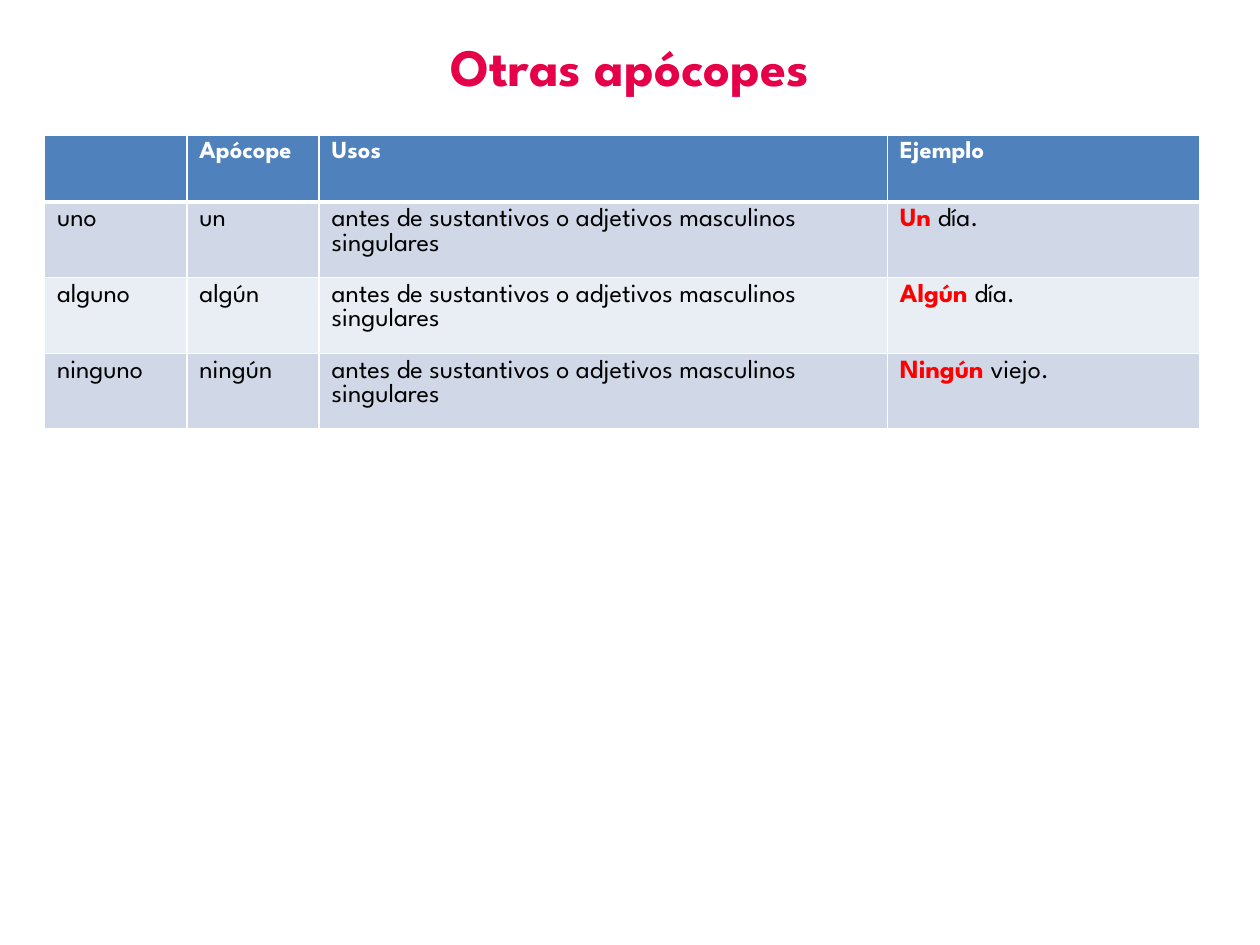
from pptx import Presentation
from pptx.dml.color import RGBColor
from pptx.enum.text import MSO_ANCHOR, MSO_AUTO_SIZE, PP_ALIGN
from pptx.oxml import parse_xml
from pptx.oxml.ns import nsdecls
from pptx.util import Pt

HUES = {"title": "E60049", "head": "4F81BD", "odd": "D0D8E8",
        "even": "E9EDF4", "white": "FFFFFF", "black": "000000", "red": "FF0000"}
FACE = "League Spartan"
STYLES = {
    "title": {"name": FACE, "size": Pt(30), "bold": True},
    "head": {"name": FACE, "size": Pt(14), "bold": True},
    "body": {"name": FACE, "size": Pt(15), "bold": False},
    "key": {"name": FACE, "size": Pt(15), "bold": True},
}
WIDTHS = [81.4, 75.6, 324.7, 178.6]
HEIGHTS = [38.2, 43.2, 43.2, 43.2]
HEADS = ["", "Apócope", "Usos", "Ejemplo"]
USE = "antes de sustantivos o adjetivos masculinos singulares"
WORDS = [("uno", "un", "Un ", "día."),
         ("alguno", "algún", "Algún ", "día."),
         ("ninguno", "ningún", "Ningún ", "viejo.")]


def tint(name):
    return RGBColor.from_string(HUES[name])


def write(para, text, style, hue):
    run = para.add_run()
    run.text = text
    for key, value in STYLES[style].items():
        setattr(run.font, key, value)
    run.font.color.rgb = tint(hue)


def edge(cell, base):
    """Draw white borders; base is the width of the lower one."""
    props = cell._tc.get_or_add_tcPr()
    sides = {"lnL": 1, "lnR": 1, "lnT": 1, "lnB": base}
    for spot, (tag, width) in enumerate(sides.items()):
        props.insert(spot, parse_xml(
            f'<a:{tag} {nsdecls("a")} w="{Pt(width)}"><a:solidFill>'
            f'<a:srgbClr val="{HUES["white"]}"/></a:solidFill></a:{tag}>'))


def add_title(slide, left, top, width, height):
    title = slide.shapes.title
    box = {"left": left, "top": top, "width": width, "height": height}
    for key, value in box.items():
        setattr(title, key, Pt(value))
    frame = title.text_frame
    form = {"word_wrap": True, "auto_size": MSO_AUTO_SIZE.NONE,
            "vertical_anchor": MSO_ANCHOR.BOTTOM}
    for key, value in form.items():
        setattr(frame, key, value)
    para = frame.paragraphs[0]
    para.alignment = PP_ALIGN.CENTER
    write(para, "Otras apócopes", "title", "title")


def add_grid(slide, left, top):
    # Each cell is a list of (text, style, colour) runs
    rows = [[[(text, "head", "white")] if text else [] for text in HEADS]]
    for full, short, key, rest in WORDS:
        plain = [[(text, "body", "black")] for text in (full, short, USE)]
        rows.append(plain + [[(key, "key", "red"), (rest, "body", "black")]])

    table = slide.shapes.add_table(
        len(rows), len(WIDTHS), Pt(left), Pt(top),
        Pt(sum(WIDTHS)), Pt(sum(HEIGHTS))).table
    for col, width in zip(table.columns, WIDTHS):
        col.width = Pt(width)
    for row, height in zip(table.rows, HEIGHTS):
        row.height = Pt(height)

    for r, row in enumerate(rows):
        band = "head" if r == 0 else "odd" if r % 2 else "even"
        for c, runs in enumerate(row):
            cell = table.cell(r, c)
            cell.fill.solid()
            cell.fill.fore_color.rgb = tint(band)
            edge(cell, 3 if r == 0 else 1)
            for run in runs:
                write(cell.text_frame.paragraphs[0], *run)


def main():
    deck = Presentation()
    deck.slide_width, deck.slide_height = Pt(720), Pt(540)
    slide = deck.slides.add_slide(deck.slide_layouts[5])
    add_title(slide, 0, 15.1, 720, 43.9)
    add_grid(slide, 25.4, 77.3)
    deck.save("out.pptx")


if __name__ == "__main__":
    main()
